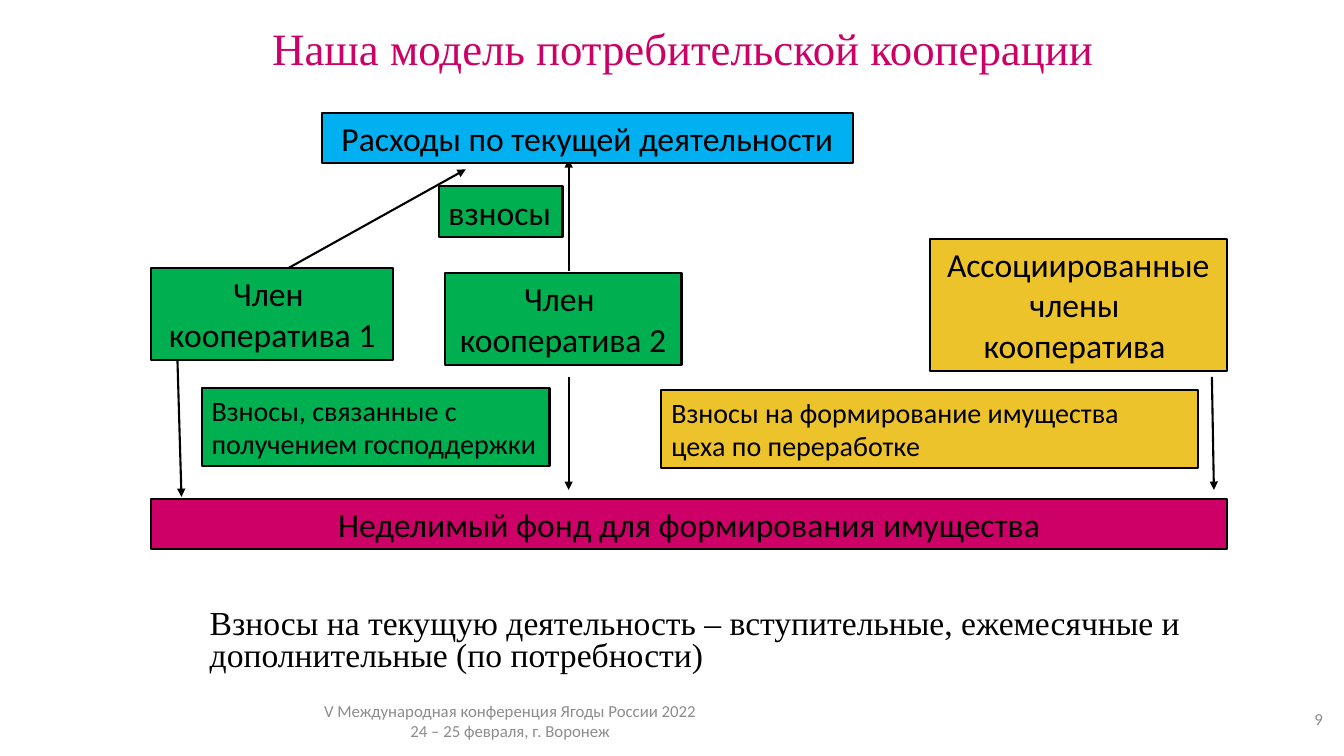
"""Build the slide on the consumer cooperative model."""
from dataclasses import dataclass

from lxml.etree import SubElement
from pptx import Presentation
from pptx.dml.color import RGBColor
from pptx.enum.shapes import MSO_CONNECTOR, MSO_SHAPE
from pptx.enum.text import MSO_ANCHOR, MSO_AUTO_SIZE, PP_ALIGN
from pptx.oxml.ns import qn
from pptx.util import Pt

PX = 9144


@dataclass(frozen=True)
class Theme:
    black: str = "000000"
    gray: str = "8C8C8C"
    pink: str = "CC0066"
    green: str = "00B050"
    gold: str = "EDC32B"
    blue: str = "00B0F0"
    sans: str = "Calibri"
    serif: str = "Times New Roman"
    head: int = 32
    large: int = 24
    mid: int = 20
    small: int = 12
    rule: float = 1.5


T = Theme()
LEFT, MID, RIGHT = PP_ALIGN.LEFT, PP_ALIGN.CENTER, PP_ALIGN.RIGHT

TITLE = ((77, 22, 1212, 59), ["Наша модель потребительской кооперации "])
BODY = ((198, 600, 999, 75), ["Взносы на текущую деятельность – вступительные, "
                              "ежемесячные и дополнительные (по потребности)"])
NOTES = [
    ((212, 695, 588, 40), MID, ["V Международная конференция Ягоды России 2022",
                                "24 – 25 февраля, г. Воронеж"]),
    ((1242, 693, 80, 40), RIGHT, ["9"]),
]
ARROWS = [
    ((286, 266), (462, 168)),
    ((1202, 374), (1204, 486)),
    ((564, 374), (564, 486)),
    ((176, 357), (180, 493)),
    ((564, 269), (564, 158)),
]
BOXES = [
    ((150, 495, 1067, 50), T.pink, T.large, MID, ["Неделимый фонд для формирования имущества"]),
    ((150, 266, 240, 91), T.green, T.large, MID, ["Член ", "кооператива 1"]),
    ((441, 271, 235, 91), T.green, T.large, MID, ["Член ", "кооператива 2"]),
    ((922, 237, 295, 131), T.gold, T.large, MID, ["Ассоциированные члены ", "кооператива "]),
    ((435, 185, 123, 50), T.green, T.large, LEFT, ["взносы"]),
    ((656, 387, 532, 77), T.gold, T.mid, LEFT,
     ["Взносы на формирование имущества", "цеха по переработке"]),
    ((319, 112, 527, 50), T.blue, T.large, MID, ["Расходы по текущей деятельности"]),
    ((200, 385, 345, 77), T.green, T.mid, LEFT, ["Взносы, связанные с получением господдержки"]),
]


def rgb(hue):
    return RGBColor.from_string(hue)


def emu(spot):
    return [v * PX for v in spot]


def place(shape, spot):
    shape.left, shape.top, shape.width, shape.height = emu(spot)


def write(shape, lines, size, hue, face=T.sans, align=LEFT, anchor=MSO_ANCHOR.TOP, space=1.0):
    frame = shape.text_frame
    frame.word_wrap = len(lines) > 1 or " " in lines[0]
    frame.auto_size = MSO_AUTO_SIZE.NONE
    frame.vertical_anchor = anchor
    for i, line in enumerate(lines):
        para = frame.add_paragraph() if i else frame.paragraphs[0]
        para.alignment = align
        para.line_spacing = space
        para.space_before = Pt(0)
        run = para.add_run()
        run.text = line
        run.font.size = Pt(size)
        run.font.name = face
        run.font.color.rgb = rgb(hue)


def add_box(slide, spot, fill, size, align, lines):
    box = slide.shapes.add_shape(MSO_SHAPE.RECTANGLE, *emu(spot))
    box.shadow.inherit = False
    box.fill.solid()
    box.fill.fore_color.rgb = rgb(fill)
    box.line.color.rgb = rgb(T.black)
    box.line.width = Pt(T.rule)
    write(box, lines, size, T.black, align=align)


def add_arrow(slide, start, end):
    arrow = slide.shapes.add_connector(MSO_CONNECTOR.STRAIGHT, *emu(start + end))
    arrow.line.color.rgb = rgb(T.black)
    arrow.line.width = Pt(T.rule)
    SubElement(arrow.line._get_or_add_ln(), qn("a:tailEnd"), type="triangle")
    SubElement(arrow._element.spPr, qn("a:effectLst"))


def main():
    deck = Presentation()
    deck.slide_width, deck.slide_height = emu((1333, 750))
    slide = deck.slides.add_slide(deck.slide_layouts[1])
    title, body = slide.placeholders

    spot, lines = TITLE
    place(title, spot)
    write(title, lines, T.head, T.pink, T.serif, MID, space=0.9)

    spot, lines = BODY
    place(body, spot)
    props = body.text_frame.paragraphs[0]._p.get_or_add_pPr()
    props.set("marL", "0")
    props.set("indent", "0")
    SubElement(props, qn("a:buNone"))
    write(body, lines, T.large, T.black, T.serif, space=0.8)

    for spot, align, lines in NOTES:
        note = slide.shapes.add_textbox(*emu(spot))
        write(note, lines, T.small, T.gray, align=align, anchor=MSO_ANCHOR.MIDDLE)
    for start, end in ARROWS:
        add_arrow(slide, start, end)
    for box in BOXES:
        add_box(slide, *box)
    deck.save("out.pptx")


if __name__ == "__main__":
    main()
